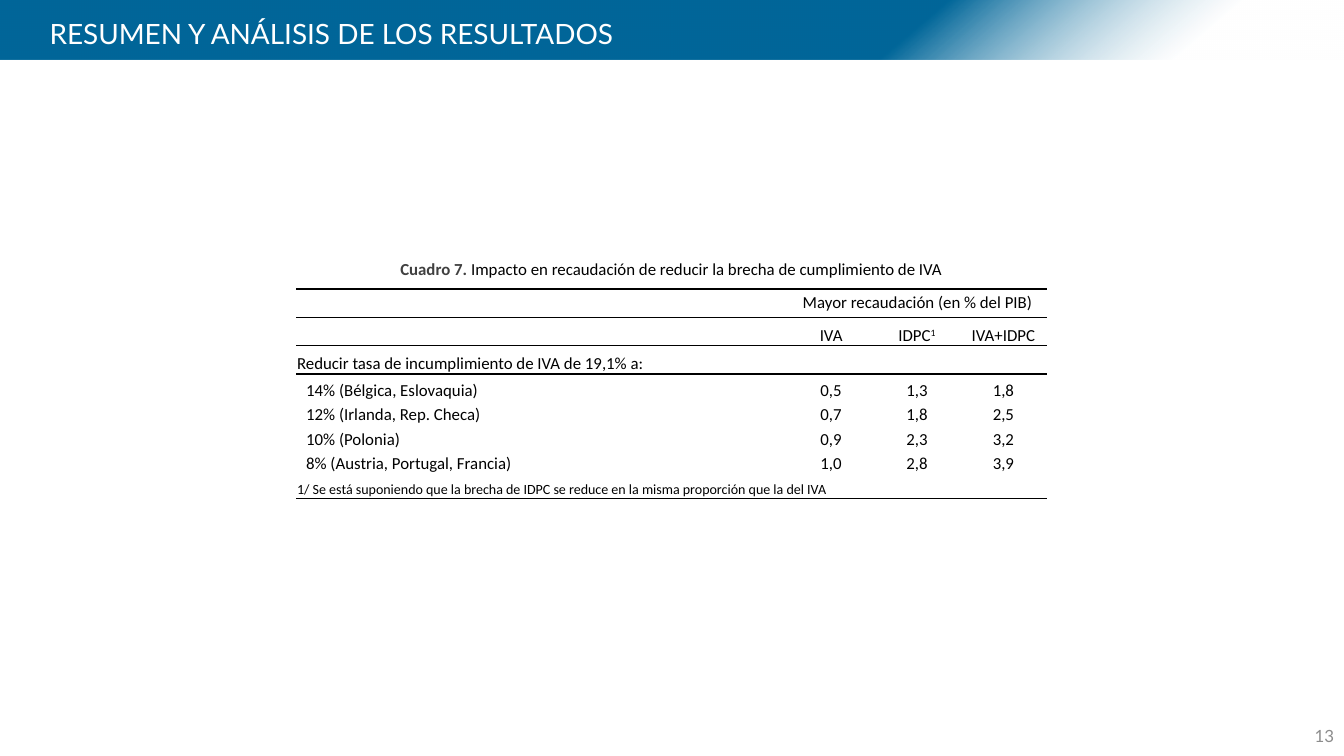
"""Build the slide with the VAT compliance gap revenue table."""
from lxml.etree import SubElement
from pptx import Presentation
from pptx.dml.color import RGBColor
from pptx.enum.shapes import MSO_SHAPE as SHAPE
from pptx.enum.text import MSO_ANCHOR as ANCHOR, PP_ALIGN as ALIGN
from pptx.oxml.ns import qn
from pptx.util import Inches, Pt


def add_run(p, text, size, color, font, bold=False):
    """Add one formatted run to a paragraph."""
    r = p.add_run()
    r.text = text
    r.font.size, r.font.name, r.font.bold = Pt(size), font, bold
    r.font.color.rgb = RGBColor.from_string(color)
    return r


def set_borders(cell, lines):
    """Draw black rules on the named sides and clear the others."""
    tcPr = cell._tc.get_or_add_tcPr()
    for side in "LRTB":
        ln = SubElement(tcPr, qn("a:ln" + side), w=str(Pt(1)))
        if side in lines:
            fill = SubElement(ln, qn("a:solidFill"))
            SubElement(fill, qn("a:srgbClr"), val="000000")
        else:
            SubElement(ln, qn("a:noFill"))


prs = Presentation()
prs.slide_width, prs.slide_height = Inches(13.3), Inches(7.48)
s = prs.slides.add_slide(prs.slide_layouts[5])

band = s.shapes.add_shape(SHAPE.RECTANGLE, 0, 0, prs.slide_width, Inches(0.59))
band.shadow.inherit = False
band.line.fill.background()
band.fill.gradient()
band.fill.gradient_angle = 310
for stop, pos, color in zip(band.fill.gradient_stops, (0.67, 0.88), ("006699", "FFFFFF")):
    stop.position = pos
    stop.color.rgb = RGBColor.from_string(color)
white = list(band.element.spPr.iter(qn("a:srgbClr")))[-1]
SubElement(white, qn("a:alpha"), val="42000")
band.element.getparent().insert(2, band.element)

title = s.shapes.title
title.left, title.top = Inches(0.39), Inches(0.09)
title.width, title.height = Inches(10.9), Inches(0.47)
tf = title.text_frame
tf.vertical_anchor = ANCHOR.MIDDLE
p = tf.paragraphs[0]
p.alignment = ALIGN.LEFT
add_run(p, "RESUMEN Y ANÁLISIS DE LOS RESULTADOS", 19.9, "FFFFFF", "Lato")

number = s.shapes.add_textbox(Inches(12.76), Inches(7.08), Inches(0.54), Inches(0.4))
tf = number.text_frame
tf.word_wrap = True
tf.vertical_anchor = ANCHOR.MIDDLE
tf.margin_right = Inches(0.1)
p = tf.paragraphs[0]
p.alignment = ALIGN.RIGHT
add_run(p, "13", 12, "8C8C8C", "Lato")

rows = [
    ["Cuadro 7. ", "", "", ""],
    ["", "Mayor recaudación (en % del PIB)", "", ""],
    ["", "IVA", "IDPC", "IVA+IDPC"],
    ["Reducir tasa de incumplimiento de IVA de 19,1% a:", "", "", ""],
    ["14% (Bélgica, Eslovaquia)", "0,5", "1,3", "1,8"],
    ["12% (Irlanda, Rep. Checa)", "0,7", "1,8", "2,5"],
    ["10% (Polonia)", "0,9", "2,3", "3,2"],
    ["8% (Austria, Portugal, Francia)", "1,0", "2,8", "3,9"],
    ["1/ Se está suponiendo que la brecha de IDPC se reduce en la misma proporción que la del IVA",
     "", "", ""],
]
widths = [4.87, 0.85, 0.85, 0.86]
heights = [0.31, 0.28, 0.28, 0.28, 0.27] + [0.24] * 4
ruled = (0, 1, 2, 3, 8)

frame = s.shapes.add_table(len(rows), len(widths), Inches(2.93), Inches(2.55),
                           Inches(sum(widths)), Inches(sum(heights)))
table = frame.table
table.first_row = table.horz_banding = False
for column, width in zip(table.columns, widths):
    column.width = Inches(width)
for row, height in zip(table.rows, heights):
    row.height = Inches(height)
for start, end in (((0, 0), (0, 3)), ((1, 1), (1, 3)), ((8, 0), (8, 3))):
    table.cell(*start).merge(table.cell(*end))

for i, texts in enumerate(rows):
    for j, text in enumerate(texts):
        cell = table.cell(i, j)
        lines = ("B" if i in ruled else "") + ("T" if i - 1 in ruled else "")
        set_borders(cell, lines)
        cell.fill.background()
        side = 0.05 if i < 2 else 0.01
        cell.margin_left = Inches(0.1 if j == 0 and 4 <= i <= 7 else side)
        cell.margin_right = Inches(side)
        cell.margin_top = Inches(0 if i < 2 else 0.01)
        cell.margin_bottom = 0
        cell.vertical_anchor = (ANCHOR.TOP, ANCHOR.MIDDLE)[i] if i < 2 else ANCHOR.BOTTOM
        p = cell.text_frame.paragraphs[0]
        p.alignment = ALIGN.CENTER if j or i == 0 else ALIGN.LEFT
        if text:
            add_run(p, text, 10 if i == 8 else 12, "404040" if i == 0 else "000000",
                    "Calibri", bold=i == 0)
        else:
            SubElement(p._p, qn("a:endParaRPr"), sz="1200")

p = table.cell(0, 0).text_frame.paragraphs[0]
p.line_spacing, p.space_after = 1.07, Pt(8)
add_run(p, "Impacto en recaudación de reducir la brecha de cumplimiento de IVA",
        12, "000000", "Calibri")
p = table.cell(2, 2).text_frame.paragraphs[0]
r = add_run(p, "1", 12, "000000", "Calibri")
r.font._element.set("baseline", "30000")

prs.save("out.pptx")
